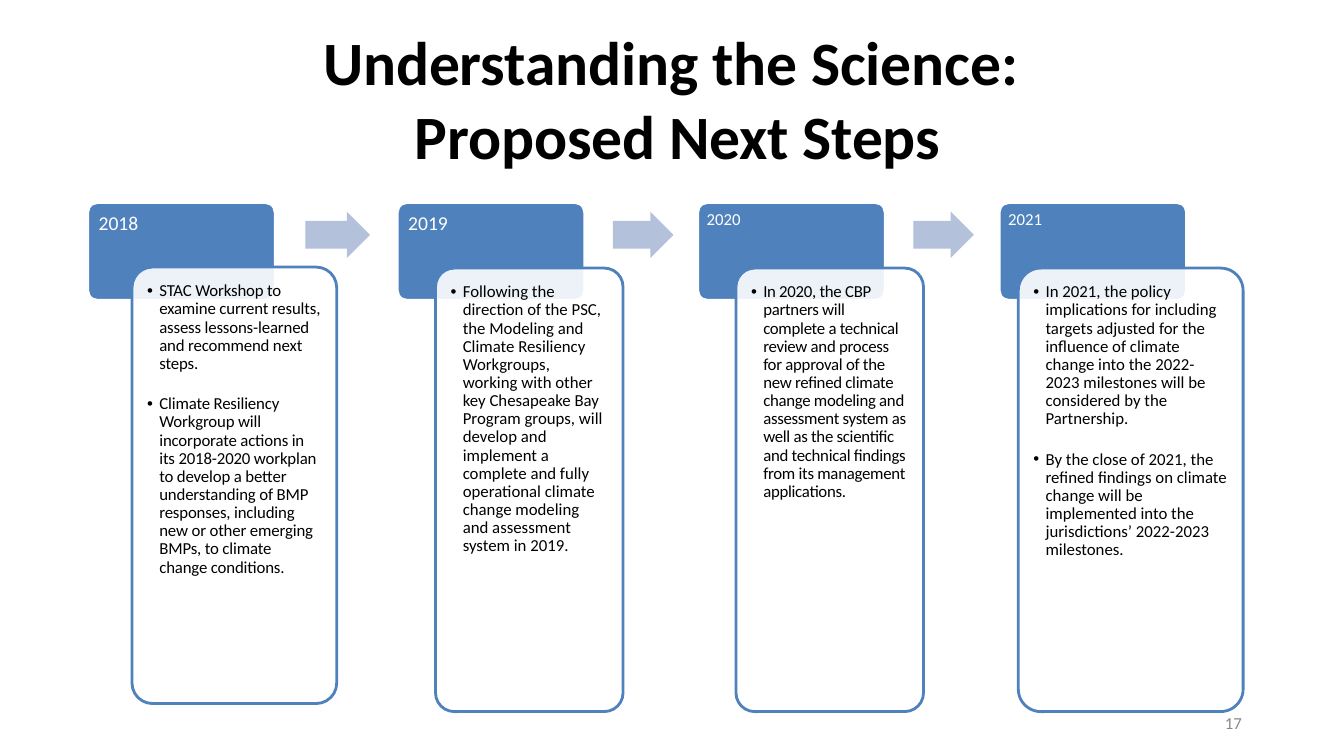
from lxml import etree
from pptx import Presentation, util as u
from pptx.dml.color import RGBColor
from pptx.enum import shapes, text
from pptx.oxml import ns

TITLE = ["Understanding the Science: ", "Proposed Next Steps"]
PAGE_NUMBER = "17"
STEPS = [
    {"year": "2018", "size": 14, "left": 87, "card": (131, 265, 203, 433), "spacing": -10, "items": [
        "STAC Workshop to examine current results, assess lessons-learned and recommend next steps.",
        "Climate Resiliency Workgroup will incorporate actions in its 2018-2020 workplan to develop "
        "a better understanding of BMP responses, including new or other emerging BMPs, to climate "
        "change conditions."]},
    {"year": "2019", "size": 14, "left": 394, "card": (432, 266, 186, 440), "spacing": 0, "items": [
        "Following the direction of the PSC, the Modeling and Climate Resiliency Workgroups, working "
        "with other key Chesapeake Bay Program groups, will develop and implement a complete and "
        "fully operational climate change modeling and assessment system in 2019."]},
    {"year": "2020", "size": 12, "left": 692, "card": (730, 266, 186, 440), "spacing": -20, "items": [
        "In 2020, the CBP partners will complete a technical review and process for approval of the "
        "new refined climate change modeling and assessment system as well as the scientific and "
        "technical findings from its management applications."]},
    {"year": "2021", "size": 12, "left": 991, "card": (1010, 266, 223, 440), "spacing": 0, "items": [
        "In 2021, the policy implications for including targets adjusted for the influence of climate "
        "change into the 2022-2023 milestones will be considered by the Partnership.",
        "By the close of 2021, the refined findings on climate change will be implemented into the "
        "jurisdictions’ 2022-2023 milestones."]},
]
ARROWS = [(303, 64), (608, 60), (906, 60)]
COLORS = {"blue": "4F81BD", "arrow": "B3C1DB", "white": "FFFFFF", "black": "000000", "gray": "888888"}
FONT = "Calibri"
PX = 9144


def px(*lengths):
    return [u.Emu(length * PX) for length in lengths]


def color(name):
    return RGBColor.from_string(COLORS[name])


def set_frame(box, left, top, right, bottom):
    frame = box.text_frame
    frame.word_wrap = True
    frame.auto_size = text.MSO_AUTO_SIZE.NONE
    frame.vertical_anchor = text.MSO_ANCHOR.TOP
    frame.margin_left, frame.margin_top, frame.margin_right, frame.margin_bottom = px(left, top, right, bottom)
    return frame


def add_span(para, words, size, ink, bold=False, spacing=0):
    span = para.add_run()
    span.text = words
    font = span.font
    font.name, font.size, font.bold = FONT, u.Pt(size), bold
    font.color.rgb = color(ink)
    if spacing:
        span._r.get_or_add_rPr().set("spc", str(spacing))


def add_block(page, kind, place, fill, line=None, adjustments=(0.1,)):
    block = page.shapes.add_shape(kind, *px(*place))
    block.shadow.inherit = False
    for index, value in enumerate(adjustments):
        block.adjustments[index] = value
    block.fill.solid()
    block.fill.fore_color.rgb = color(fill)
    if line:
        block.line.color.rgb = color(line)
        block.line.width = u.Pt(2)
    else:
        block.line.fill.background()
    return block


def place_box(box, place):
    box.left, box.top, box.width, box.height = px(*place)


def fill_title(box):
    place_box(box, (50, 23, 1244, 150))
    para = set_frame(box, 0, 1, 0, 0).paragraphs[0]
    para.alignment = text.PP_ALIGN.CENTER
    para.space_before = u.Pt(1)
    for index, words in enumerate(TITLE):
        if index:
            para.add_line_break()
        add_span(para, words, 44, "black", True, -10)


def add_year(page, step):
    place = (step["left"], 201, 186, 97)
    block = add_block(page, shapes.MSO_SHAPE.ROUNDED_RECTANGLE, place, "blue", "white")
    inset = 8 if step["size"] == 14 else 6
    para = set_frame(block, inset, inset, inset, inset).paragraphs[0]
    para.alignment = text.PP_ALIGN.LEFT
    para.line_spacing = 0.9
    add_span(para, step["year"], step["size"], "white")


def add_card(page, step, box):
    left, top, width, height = step["card"]
    card = add_block(page, shapes.MSO_SHAPE.ROUNDED_RECTANGLE, step["card"], "white", "blue")
    tint = card.fill._xPr.find(".//" + ns.qn("a:srgbClr"))
    etree.SubElement(tint, ns.qn("a:alpha"), val="90000")
    place_box(box, (left + 6, top + 6, width - 12, height - 12))
    box.element.getparent().append(box.element)
    frame = set_frame(box, 9, 9, 9, 9)
    for index, words in enumerate(step["items"]):
        para = frame.add_paragraph() if index else frame.paragraphs[0]
        para.alignment = text.PP_ALIGN.LEFT
        para.line_spacing = 0.9
        para.space_before = u.Pt(0)
        para.space_after = u.Pt(16)
        layout = para._p.get_or_add_pPr()
        layout.set("marL", str(12 * PX))
        layout.set("indent", str(-12 * PX))
        etree.SubElement(layout, ns.qn("a:buFont"), typeface="Arial")
        etree.SubElement(layout, ns.qn("a:buChar"), char="•")
        add_span(para, words, 12, "black", spacing=step["spacing"])


def main():
    deck = Presentation()
    deck.slide_width, deck.slide_height = px(1333, 750)
    page = deck.slides.add_slide(deck.slide_layouts.get_by_name("Comparison"))
    title, *lists = list(page.placeholders)
    fill_title(title)
    for step, box in zip(STEPS, lists):
        add_year(page, step)
        add_card(page, step, box)
    for left, width in ARROWS:
        add_block(page, shapes.MSO_SHAPE.RIGHT_ARROW, (left, 210, width, 46), "arrow", adjustments=(0.6, 0.5))
    number = page.shapes.add_textbox(*px(1212, 707, 23, 19))
    para = set_frame(number, 3, 0, 0, 0).paragraphs[0]
    add_span(para, PAGE_NUMBER, 12, "gray")
    deck.save("out.pptx")


if __name__ == "__main__":
    main()
